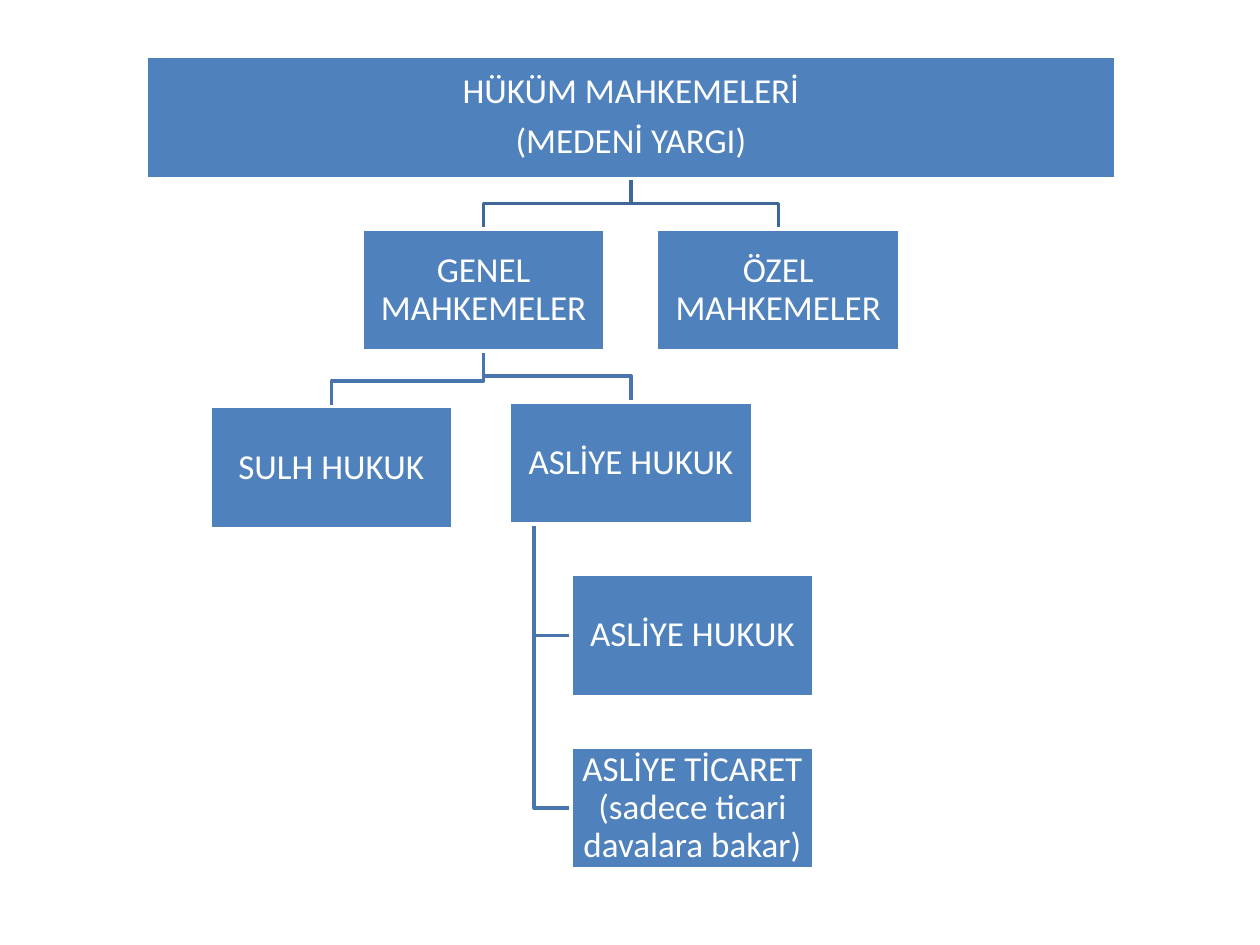
from pptx import Presentation
from pptx.dml.color import RGBColor
from pptx.enum.shapes import MSO_SHAPE as Shape
from pptx.enum.text import MSO_ANCHOR as Anchor, PP_ALIGN as Align
from pptx.util import Cm, Pt

BLUE = RGBColor(0x4F, 0x81, 0xBD)
WHITE = RGBColor(0xFF, 0xFF, 0xFF)
DARK = RGBColor(0x3F, 0x67, 0x97)
MID = RGBColor(0x48, 0x75, 0xAC)

WIDE, HIGH = 4.9, 2.46
TOP, STEP, BEND = 1.14, 3.48, 0.52
TRUNK = 10.77
ROWS = [TOP + STEP * row for row in range(5)]

FRAME = {"word_wrap": True, "vertical_anchor": Anchor.MIDDLE,
         "margin_left": Cm(0.03), "margin_right": Cm(0.03),
         "margin_top": Cm(0.03), "margin_bottom": Cm(0.03)}
FONT = {"name": "Calibri", "size": Pt(20)}
PARA = {"alignment": Align.CENTER, "line_spacing": 0.9}

HEAD = (12.72, ROWS[0], 19.53, ["HÜKÜM MAHKEMELERİ", "(MEDENİ YARGI)"])
MAIN = (9.75, ROWS[1], WIDE, ["GENEL MAHKEMELER"])
SPEC = (15.69, ROWS[1], WIDE, ["ÖZEL MAHKEMELER"])
PEACE = (6.68, 8.2, WIDE, ["SULH HUKUK"])
FIRST = (12.72, ROWS[2], WIDE, ["ASLİYE HUKUK"])
CIVIL = (13.96, ROWS[3], WIDE, ["ASLİYE HUKUK"])
TRADE = (13.96, ROWS[4], WIDE, ["ASLİYE TİCARET (sadece ticari davalara bakar)"])

FORKS = [(HEAD, SPEC, DARK), (MAIN, FIRST, MID),
         (MAIN, PEACE, MID), (HEAD, MAIN, DARK)]


def style(item, values):
    for name, value in values.items():
        setattr(item, name, value)


def add_line(slide, points, color):
    spots = [(Cm(x), Cm(y)) for x, y in points]
    form = slide.shapes.build_freeform(*spots[0], scale=1.0)
    form.add_line_segments(spots[1:], close=False)
    line = form.convert_to_shape()
    line.shadow.inherit = False
    line.fill.background()
    line.line.color.rgb = color
    line.line.width = Pt(2)


def add_fork(slide, above, below, color):
    start, end = above[0], below[0]
    base, top = above[1] + HIGH, below[1]
    turn = top - BEND
    add_line(slide, [(start, base), (start, turn), (end, turn), (end, top)], color)


def add_branch(slide, above, below):
    base, mid = above[1] + HIGH, below[1] + HIGH / 2
    edge = below[0] - below[2] / 2
    add_line(slide, [(TRUNK, base), (TRUNK, mid), (edge, mid)], MID)


def add_court(slide, center, top, wide, texts):
    box = slide.shapes.add_shape(Shape.RECTANGLE, Cm(center - wide / 2),
                                 Cm(top), Cm(wide), Cm(HIGH))
    box.shadow.inherit = False
    box.fill.solid()
    box.fill.fore_color.rgb = BLUE
    box.line.color.rgb = WHITE
    box.line.width = Pt(2)
    frame = box.text_frame
    style(frame, FRAME)
    frame.text = "\n".join(texts)
    for para in frame.paragraphs:
        style(para, PARA)
        style(para.font, FONT)
        para.font.color.rgb = WHITE
    for para in frame.paragraphs[:-1]:
        para.space_after = Pt(7)


def main():
    deck = Presentation()
    deck.slide_width, deck.slide_height = Cm(25.4), Cm(19.05)
    slide = deck.slides.add_slide(deck.slide_layouts[6])
    for above, below, color in FORKS:
        add_fork(slide, above, below, color)
    for court in (TRADE, CIVIL):
        add_branch(slide, FIRST, court)
    for court in (HEAD, MAIN, PEACE, FIRST, CIVIL, TRADE, SPEC):
        add_court(slide, *court)
    deck.save("out.pptx")


if __name__ == "__main__":
    main()
